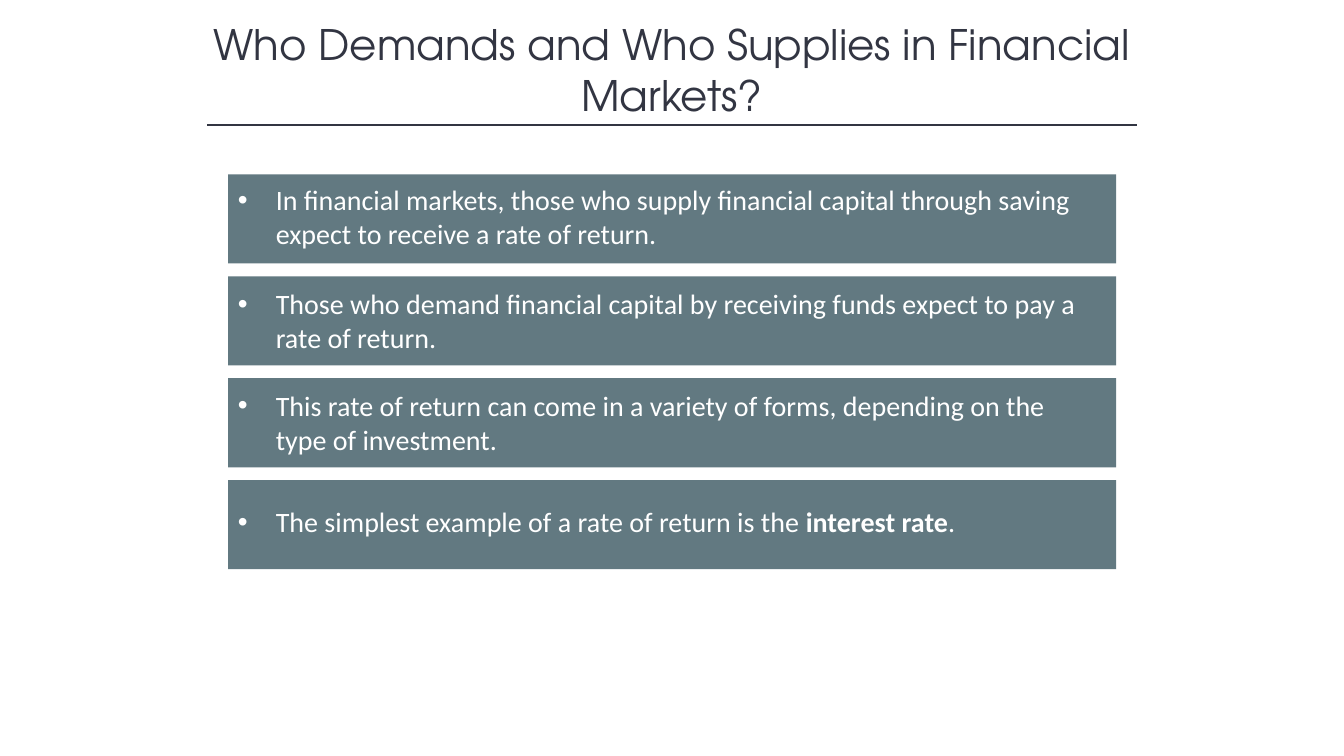
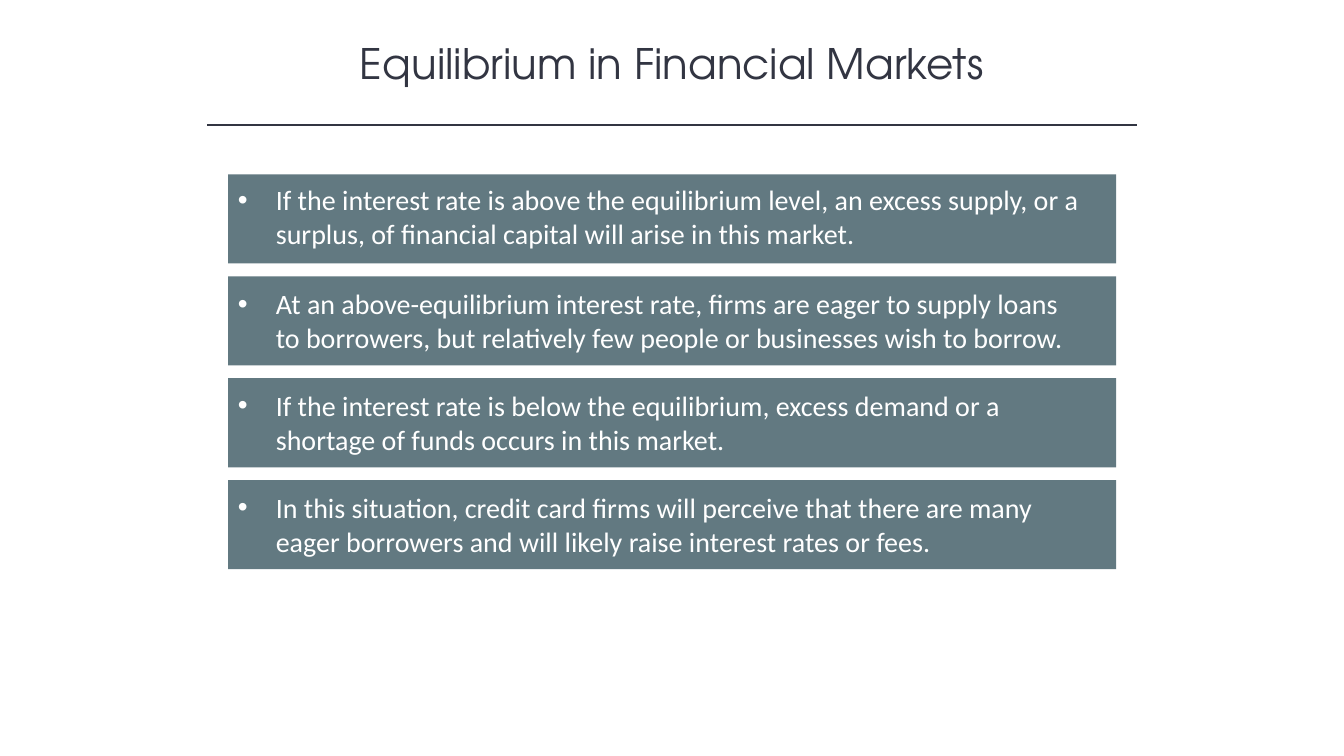
from lxml.etree import SubElement
from pptx import Presentation
from pptx.dml.color import RGBColor
from pptx.enum.shapes import MSO_CONNECTOR as Connector, MSO_SHAPE as Shape
from pptx.enum.text import MSO_ANCHOR as Anchor, PP_ALIGN as Align
from pptx.oxml.ns import qn
from pptx.util import Pt

INK, SLATE, WHITE = "323542", "627981", "FFFFFF"
TITLE_FONT, BODY_FONT = "TeX Gyre Adventor", "Calibri"
SLIDE_W, SLIDE_H = 960, 540
TITLE_LEFT, TITLE_W = 120, 720
RULE_LEFT, RULE_RIGHT, RULE_Y = 148.2, 812.2, 89.4
CARD_LEFT, CARD_TOP, CARD_W, CARD_H, CARD_PITCH = 162.9, 124.6, 634.3, 63.6, 72.8
INSET_X, INSET_Y, INSET_RIGHT, HANG = 7.2, 3.6, 26.6, 27

SLIDES = [
    {
        "title": "Who Demands and Who Supplies in Financial Markets?",
        "title_top": 9.4,
        "title_height": 79.9,
        "cards": [
            ["In financial markets, those who supply financial capital through saving "
             "expect to receive a rate of return."],
            ["Those who demand financial capital by receiving funds expect to pay a "
             "rate of return."],
            ["This rate of return can come in a variety of forms, depending on the "
             "type of investment."],
            ["The simplest example of a rate of return is the ", "interest rate", "."],
        ],
        "text_lifts": [1.8, 0.4, 0.4, 2.2],
    },
    {
        "title": "Equilibrium in Financial Markets",
        "title_top": 23,
        "title_height": 43.9,
        "cards": [
            ["If the interest rate is above the equilibrium level, an excess supply, or a "
             "surplus, of financial capital will arise in this market."],
            ["At an above-equilibrium interest rate, firms are eager to supply loans "
             "to borrowers, but relatively few people or businesses wish to borrow."],
            ["If the interest rate is below the equilibrium, excess demand or a "
             "shortage of funds occurs in this market."],
            ["In this situation, credit card firms will perceive that there are many "
             "eager borrowers and will likely raise interest rates or fees."],
        ],
        "text_lifts": [1.8, 0.4, 0.4, 0.4],
    },
]


def rgb(code):
    """Turn a hex string into a colour."""
    return RGBColor.from_string(code)


def set_frame(frame, right=INSET_X, bottom=INSET_Y):
    """Wrap the text, centre it vertically and set its insets."""
    frame.word_wrap = True
    frame.vertical_anchor = Anchor.MIDDLE
    frame.margin_left, frame.margin_right = Pt(INSET_X), Pt(right)
    frame.margin_top, frame.margin_bottom = Pt(INSET_Y), Pt(bottom)


def add_run(paragraph, text, font, size, color, bold=False):
    """Append one styled run."""
    run = paragraph.add_run()
    run.text = text
    run.font.name, run.font.size, run.font.bold = font, Pt(size), bold
    run.font.color.rgb = rgb(color)


def add_heading(slide, title, top, height):
    """Add the centred title and the rule below it."""
    heading = slide.shapes.add_textbox(Pt(TITLE_LEFT), Pt(top), Pt(TITLE_W), Pt(height))
    set_frame(heading.text_frame)
    paragraph = heading.text_frame.paragraphs[0]
    paragraph.alignment = Align.CENTER
    add_run(paragraph, title, TITLE_FONT, 30, INK)
    rule = slide.shapes.add_connector(
        Connector.STRAIGHT, Pt(RULE_LEFT), Pt(RULE_Y), Pt(RULE_RIGHT), Pt(RULE_Y))
    rule.line.color.rgb, rule.line.width = rgb(INK), Pt(1)
    SubElement(rule._element.spPr, qn("a:effectLst"))


def add_card(slide, row, parts, lift):
    """Add one bulleted card, with every second part in bold."""
    card = slide.shapes.add_shape(
        Shape.RECTANGLE, Pt(CARD_LEFT), Pt(CARD_TOP + row * CARD_PITCH),
        Pt(CARD_W), Pt(CARD_H))
    card.shadow.inherit = False
    card.fill.solid()
    card.fill.fore_color.rgb = rgb(SLATE)
    card.line.fill.background()
    set_frame(card.text_frame, INSET_RIGHT, INSET_Y + 2 * lift)
    paragraph = card.text_frame.paragraphs[0]
    paragraph.alignment = Align.LEFT
    props = paragraph._p.get_or_add_pPr()
    props.set("marL", str(Pt(HANG)))
    props.set("indent", str(-Pt(HANG)))
    SubElement(props, qn("a:buFont"), typeface="Arial")
    SubElement(props, qn("a:buChar"), char="•")
    for index, part in enumerate(parts):
        add_run(paragraph, part, BODY_FONT, 20, WHITE, bold=index % 2 == 1)


def main():
    """Build and save the slides."""
    deck = Presentation()
    deck.slide_width, deck.slide_height = Pt(SLIDE_W), Pt(SLIDE_H)
    for content in SLIDES:
        slide = deck.slides.add_slide(deck.slide_layouts[6])
        add_heading(slide, content["title"], content["title_top"], content["title_height"])
        for row, (parts, lift) in enumerate(zip(content["cards"], content["text_lifts"])):
            add_card(slide, row, parts, lift)
    deck.save("out.pptx")


if __name__ == "__main__":
    main()
